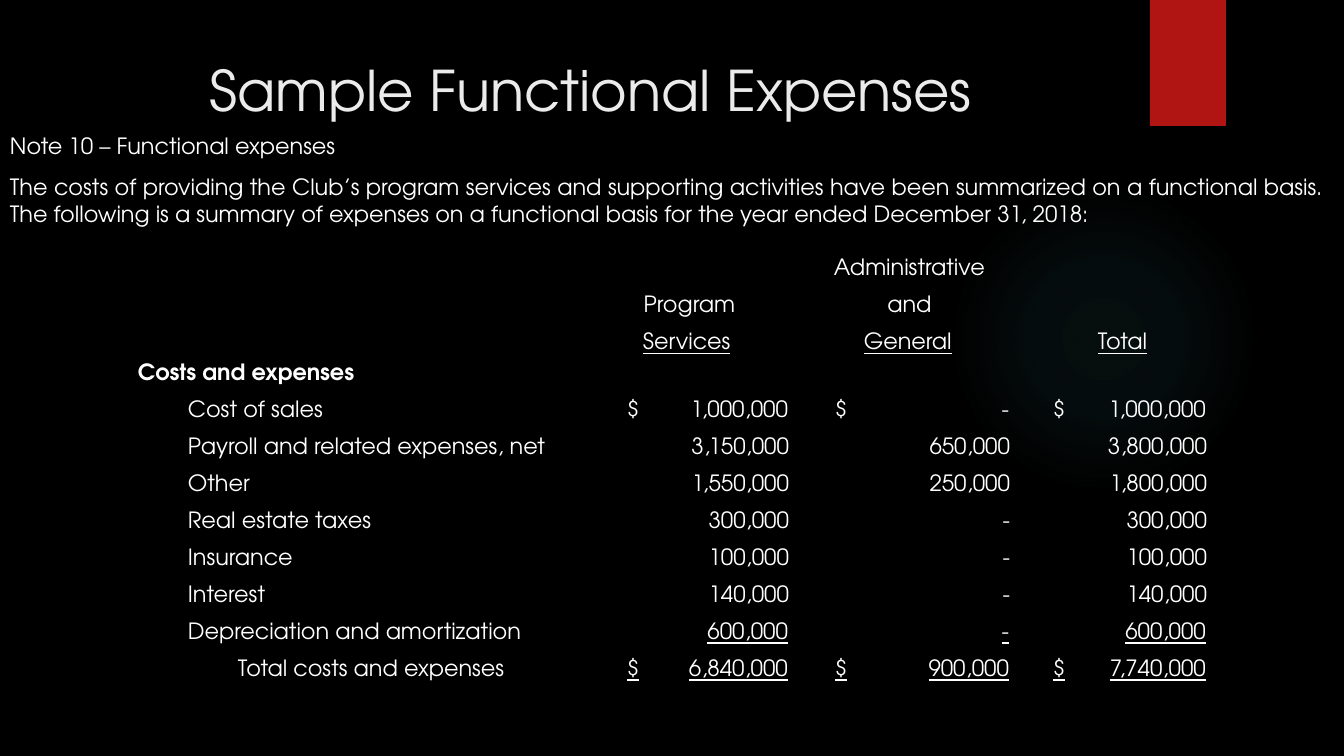
from lxml import etree
from pptx import Presentation
from pptx.dml.color import RGBColor
from pptx.enum.shapes import MSO_SHAPE
from pptx.enum.text import MSO_ANCHOR, PP_ALIGN
from pptx.oxml.ns import qn
from pptx.util import Pt

LEFT, MID, RIGHT, JUST = PP_ALIGN.LEFT, PP_ALIGN.CENTER, PP_ALIGN.RIGHT, PP_ALIGN.JUSTIFY
TOP, CENTER = MSO_ANCHOR.TOP, MSO_ANCHOR.MIDDLE
RECT, OVAL = MSO_SHAPE.RECTANGLE, MSO_SHAPE.OVAL

# Content
TITLE = "Sample Functional Expenses"
NOTES = [
    ("Note 10 – Functional expenses", LEFT),
    ("The costs of providing the Club’s program services and supporting activities "
     "have been summarized on a functional basis. The following is a summary of "
     "expenses on a functional basis for the year ended December 31, 2018:", JUST),
]
HEADS = [
    ("", "Administrative", ""),
    ("Program", "and", ""),
    ("Services", "General", "Total"),
]
GROUP = "Costs and expenses"
# label, amounts, dollar sign, underline
COSTS = [
    ("Cost of sales", ("1,000,000", "-", "1,000,000"), True, False),
    ("Payroll and related expenses, net", ("3,150,000", "650,000", "3,800,000"), False, False),
    ("Other", ("1,550,000", "250,000", "1,800,000"), False, False),
    ("Real estate taxes", ("300,000", "-", "300,000"), False, False),
    ("Insurance", ("100,000", "-", "100,000"), False, False),
    ("Interest", ("140,000", "-", "140,000"), False, False),
    ("Depreciation and amortization", ("600,000", "-", "600,000"), False, True),
    ("Total costs and expenses", ("6,840,000", "900,000", "7,740,000"), True, True),
]

# Look, lengths in px
COLORS = {"back": "000000", "title": "EBEBEB", "text": "FFFFFF",
          "mark": "B01513", "glow": "50B9C1"}
FONT = "TeX Gyre Adventor"
SCALE = 914400 / 100.8
COLS = (452, 219, 221, 197)
ROW, PAD, STEP = 37, 10, 50
HEAD_LEAD, HEAD_TAB = (33, 35, 48), 30
SUM_LEAD = (47, 36, 33)


def px(n):
    return round(n * SCALE)


def rgb(name):
    return RGBColor.from_string(COLORS[name])


def style(para, size, color="text", bold=False, line=False):
    for run in para.runs:
        font = run.font
        font.name, font.size = FONT, Pt(size)
        font.bold, font.underline = bold, line
        font.color.rgb = rgb(color)


def add_tab(para, pos, side):
    tabs = etree.SubElement(para._p.get_or_add_pPr(), qn("a:tabLst"))
    etree.SubElement(tabs, qn("a:tab"), pos=str(px(pos)), algn=side)


def add_box(x, y, w, h, anchor):
    frame = slide.shapes.add_textbox(px(x), px(y), px(w), px(h)).text_frame
    frame.word_wrap = True
    frame.vertical_anchor = anchor
    return frame


def add_shape(kind, x, y, w, h):
    shape = slide.shapes.add_shape(kind, px(x), px(y), px(w), px(h))
    shape.shadow.inherit = False
    shape.line.fill.background()
    return shape


def put(row, col, text, align, lead=PAD, tab=None, anchor=TOP, bold=False, line=False):
    cell = table.cell(row, col)
    cell.margin_left = px(lead)
    cell.vertical_anchor = anchor
    para = cell.text_frame.paragraphs[0]
    para.text = text
    para.alignment = align
    if tab:
        add_tab(para, *tab)
    style(para, 16, bold=bold, line=line)


deck = Presentation()
deck.slide_width, deck.slide_height = px(1344), px(756)
slide = deck.slides.add_slide(deck.slide_layouts[6])
slide.background.fill.solid()
slide.background.fill.fore_color.rgb = rgb("back")

# Soft glow
glow = add_shape(OVAL, 949, 184, 310, 310)
glow.fill.gradient()
grad = glow._element.spPr.find(qn("a:gradFill"))
for part in list(grad):
    grad.remove(part)
stops = etree.SubElement(grad, qn("a:gsLst"))
for pos, alpha in ((0, 7), (36, 6), (69, 0)):
    stop = etree.SubElement(stops, qn("a:gs"), pos=str(pos * 1000))
    tint = etree.SubElement(stop, qn("a:srgbClr"), val=COLORS["glow"])
    etree.SubElement(tint, qn("a:alpha"), val=str(alpha * 1000))
path = etree.SubElement(grad, qn("a:path"), path="circle")
etree.SubElement(path, qn("a:fillToRect"), l="50000", t="50000", r="50000", b="50000")

# Red marker
mark = add_shape(RECT, 1150, 0, 76, 126)
mark.fill.solid()
mark.fill.fore_color.rgb = rgb("mark")

# Title and notes
para = add_box(72, 50, 1037, 78, CENTER).paragraphs[0]
para.text = TITLE
para.alignment = MID
style(para, 40, "title")

frame = add_box(0, 127, 1334, 110, TOP)
for i, (text, align) in enumerate(NOTES):
    para = frame.add_paragraph() if i else frame.paragraphs[0]
    para.text = text
    para.alignment = align
    if i:
        para.space_before = Pt(10)
    style(para, 16)

# Bare table
count = len(HEADS) + 1 + len(COSTS)
table = slide.shapes.add_table(count, len(COLS), px(128), px(251),
                               px(sum(COLS)), px(ROW * count)).table
table.first_row = table.horz_banding = False
for col, width in zip(table.columns, COLS):
    col.width = px(width)
for row in table.rows:
    row.height = px(ROW)
for cell in table.iter_cells():
    cell.margin_top = cell.margin_bottom = px(2)
    cell.margin_right = px(PAD)
    cell.fill.background()
    for i, side in enumerate(("lnL", "lnR", "lnT", "lnB")):
        edge = etree.Element(qn("a:" + side), w="0")
        etree.SubElement(edge, qn("a:noFill"))
        cell._tc.tcPr.insert(i, edge)

# Column heads, the last row underlined from a tab
for r, heads in enumerate(HEADS):
    for c, text in enumerate(heads):
        if not text:
            continue
        if r == len(HEADS) - 1:
            put(r, c + 1, "\t" + text, LEFT, HEAD_LEAD[c], (HEAD_TAB, "l"), CENTER, line=True)
        else:
            put(r, c + 1, text, MID, anchor=CENTER)

# Costs, with a right tab where a sign or rule spans the column
put(len(HEADS), 0, GROUP, LEFT, bold=True)
for r, (label, sums, sign, line) in enumerate(COSTS, len(HEADS) + 1):
    depth = 2 if r == count - 1 else 1
    put(r, 0, label, LEFT, PAD + depth * STEP)
    for c, text in enumerate(sums):
        if sign or line:
            lead = SUM_LEAD[c]
            stop = COLS[c + 1] - lead - PAD - 1
            put(r, c + 1, ("$" if sign else "") + "\t" + text, LEFT, lead, (stop, "r"), line=line)
        else:
            put(r, c + 1, text, RIGHT)

deck.save("out.pptx")
